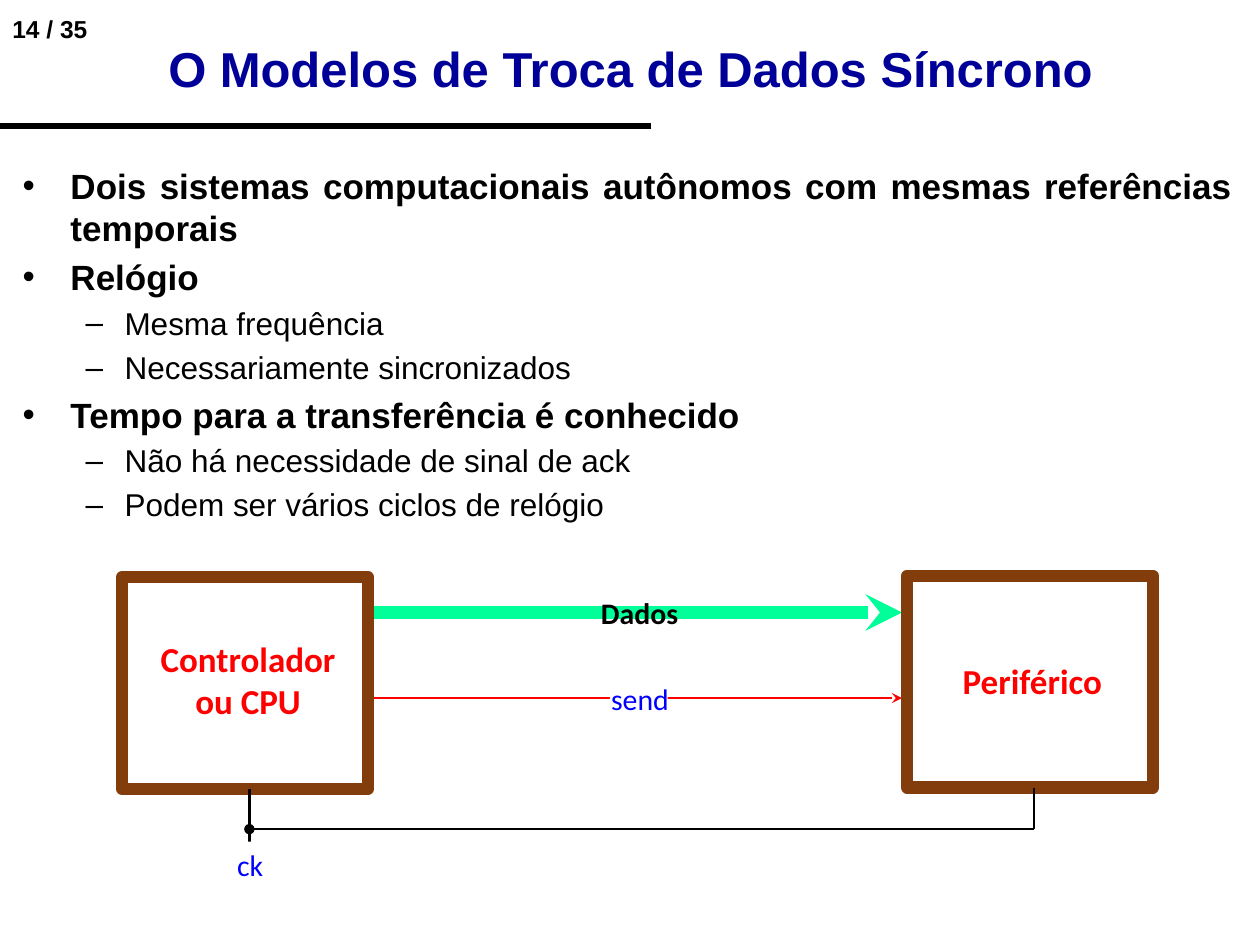
from pptx import Presentation
from pptx.dml.color import RGBColor
from pptx.enum.shapes import MSO_CONNECTOR as Connector, MSO_SHAPE as Shape
from pptx.enum.text import MSO_ANCHOR as Anchor, PP_ALIGN as Align
from pptx.oxml.ns import qn
from pptx.util import Pt
from lxml.etree import SubElement

BLACK = RGBColor(0x00, 0x00, 0x00)
WHITE = RGBColor(0xFF, 0xFF, 0xFF)
NAVY = RGBColor(0x00, 0x00, 0x99)
BLUE = RGBColor(0x00, 0x00, 0xFF)
RED = RGBColor(0xFF, 0x00, 0x00)
GREEN = RGBColor(0x00, 0xFF, 0x99)
BROWN = RGBColor(0x83, 0x3C, 0x0B)

THIN = 1.38
CLOCK_X, CLOCK_Y = 142.5, 473.8
DEVICE_X = 591

TOPICS = [
    (0, "Dois sistemas computacionais autônomos com mesmas referências temporais"),
    (0, "Relógio"),
    (1, "Mesma frequência"),
    (1, "Necessariamente sincronizados"),
    (0, "Tempo para a transferência é conhecido"),
    (1, "Não há necessidade de sinal de ack"),
    (1, "Podem ser vários ciclos de relógio"),
]
LEVELS = [
    dict(bullet="•", margin=27.4, hanging=27.4, size=20, bold=True),
    dict(bullet="–", margin=58.3, hanging=22.3, size=18, bold=False),
]


def write(para, text, size=17, color=BLACK, bold=False, font="Calibri", align=Align.LEFT):
    para.alignment = align
    for index, line in enumerate(text.split("\n")):
        if index:
            para.add_line_break()
        span = para.add_run()
        span.text = line
        span.font.name = font
        span.font.size = Pt(size)
        span.font.bold = bold
        span.font.color.rgb = color


def add_frame(shapes, left, top, width, height, inset=(0, 0), wrap=True, anchor=Anchor.TOP):
    frame = shapes.add_textbox(Pt(left), Pt(top), Pt(width), Pt(height)).text_frame
    frame.word_wrap = wrap
    frame.vertical_anchor = anchor
    frame.margin_left = frame.margin_right = Pt(inset[0])
    frame.margin_top = frame.margin_bottom = Pt(inset[1])
    return frame


def add_label(shapes, text, place, inset=(0, 0), wrap=True, anchor=Anchor.TOP, **style):
    frame = add_frame(shapes, *place, inset=inset, wrap=wrap, anchor=anchor)
    write(frame.paragraphs[0], text, **style)


def add_topics(shapes):
    frame = add_frame(shapes, 5.8, 88.6, 705.6, 227.5, inset=(7.2, 5.6))
    for index, (level, text) in enumerate(TOPICS):
        style = LEVELS[level]
        para = frame.add_paragraph() if index else frame.paragraphs[0]
        para.level = level
        if index:
            para.space_before = Pt(style["size"] * 0.2)
        props = para._p.get_or_add_pPr()
        props.set("marL", str(Pt(style["margin"])))
        props.set("indent", str(-Pt(style["hanging"])))
        SubElement(props, qn("a:buFont")).set("typeface", "Arial")
        SubElement(props, qn("a:buChar")).set("char", style["bullet"])
        write(para, text, size=style["size"], bold=style["bold"],
              font="Arial", align=Align.JUSTIFY)


def add_box(shapes, left, top, width, height, border=None):
    box = shapes.add_shape(Shape.RECTANGLE, Pt(left), Pt(top), Pt(width), Pt(height))
    box.shadow.inherit = False
    if border is None:
        box.fill.solid()
        box.fill.fore_color.rgb = WHITE
        box.line.fill.background()
    else:
        box.fill.background()
        box.line.color.rgb = border
        box.line.width = Pt(7)


def add_line(shapes, start, end, color=BLACK, width=THIN, head=None, tail=None):
    line = shapes.add_connector(Connector.STRAIGHT, *map(Pt, start + end))
    line.line.color.rgb = color
    line.line.width = Pt(width)
    outline = line.line._get_or_add_ln()
    for tag, kind in (("a:headEnd", head), ("a:tailEnd", tail)):
        if kind:
            SubElement(outline, qn(tag)).set("type", kind)
    SubElement(line._element.spPr, qn("a:effectLst"))


def add_diagram(shapes):
    name = dict(size=20, color=RED, bold=True)
    add_line(shapes, (213.8, 350), (515.5, 350), GREEN, 7, tail="stealth")
    add_label(shapes, "Dados", (343.4, 339.8, 56.2, 28), bold=True)
    add_line(shapes, (213.8, 398.9), (515.5, 398.9), RED, tail="stealth")
    add_box(shapes, 348.5, 388.8, 33.1, 20.2)
    add_label(shapes, "send", (349.2, 388.8, 41.8, 26.6), color=BLUE)

    controller = (69.8, 329.8, 140.4, 121)
    add_box(shapes, *controller)
    add_box(shapes, *controller, border=BROWN)
    add_label(shapes, "Controlador\nou CPU", (91.4, 364.3, 100.8, 48.2),
              align=Align.CENTER, **name)
    add_line(shapes, (CLOCK_X, 450.7), (CLOCK_X, 483.1))
    add_box(shapes, 121.7, 481, 40.3, 25.9)
    add_label(shapes, "ck", (135.4, 483.8, 15.1, 20.9), wrap=False,
              color=BLUE, align=Align.CENTER)

    device = shapes.add_group_shape().shapes
    add_box(device, 522.7, 329.8, 133.9, 118.8)
    add_box(device, 518.4, 329, 140.4, 121, border=BROWN)
    add_label(device, "Periférico", (550.1, 376.6, 85, 24.5), **name)
    add_line(shapes, (DEVICE_X, 450), (DEVICE_X, CLOCK_Y))
    add_line(shapes, (CLOCK_X, CLOCK_Y), (DEVICE_X, CLOCK_Y), head="oval")


def main():
    deck = Presentation()
    deck.slide_width, deck.slide_height = Pt(720), Pt(540)
    page = deck.slides.add_slide(deck.slide_layouts[6])
    shapes = page.shapes
    add_label(shapes, "14 / 35", (0, 4.3, 64.8, 24.5), inset=(7.2, 3.6),
              size=14, bold=True, font="Arial")
    add_line(shapes, (372.2, 72), (0, 72), width=3)
    add_topics(shapes)
    add_label(shapes, "O Modelos de Troca de Dados Síncrono", (30.2, 23.8, 660.2, 30.2),
              inset=(7.2, 3.6), anchor=Anchor.MIDDLE, size=28, color=NAVY,
              bold=True, font="Arial", align=Align.CENTER)
    add_diagram(shapes)
    deck.save("out.pptx")


if __name__ == "__main__":
    main()
